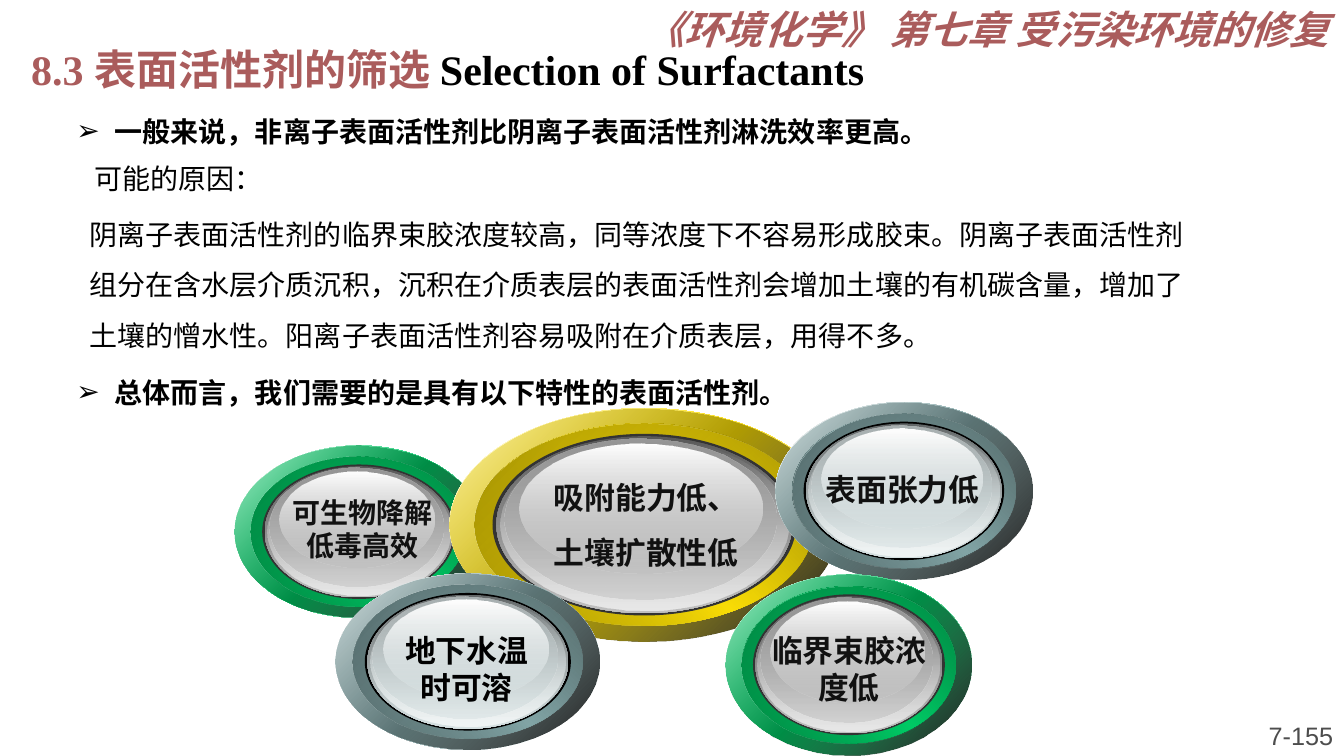
from collections import namedtuple

from lxml import etree
from pptx import Presentation, util as u
from pptx.dml.color import RGBColor
from pptx.enum import shapes, text
from pptx.oxml import ns

CELL = u.Inches(0.1)  # the slide is a grid of 133.3 columns by 75 rows
CJK, SERIF, SANS = "Noto Sans CJK SC", "Times New Roman", "Arial"
SINGLE, WIDE = 1.0, 1.5  # line spacings

WHITE = RGBColor(0xFF, 0xFF, 0xFF)
BLACK = RGBColor(0x00, 0x00, 0x00)
INK = RGBColor(0x11, 0x11, 0x11)
GREY = RGBColor(0x4D, 0x4D, 0x4D)
ROSE = RGBColor(0xAA, 0x5C, 0x5C)
CHARCOAL = RGBColor(0x33, 0x33, 0x33)

Ring = namedtuple("Ring", "hue deep dark")
GREEN = Ring(RGBColor(0x00, 0xCC, 0x66), RGBColor(0x00, 0x6E, 0x37), RGBColor(0x00, 0x82, 0x41))
YELLOW = Ring(RGBColor(0xFC, 0xDF, 0x06), RGBColor(0x88, 0x79, 0x03), RGBColor(0xA0, 0x8E, 0x04))
TEAL = Ring(RGBColor(0x83, 0xA6, 0xA7), RGBColor(0x47, 0x5A, 0x5A), RGBColor(0x53, 0x69, 0x6A))

Lens = namedtuple("Lens", "edge shadow face light shade")
SILVER = Lens(CHARCOAL, RGBColor(0x59, 0x59, 0x59), RGBColor(0xC0, 0xC0, 0xC0),
              RGBColor(0xE9, 0xE9, 0xE9), RGBColor(0x98, 0x98, 0x98))
ICE = Lens(BLACK, RGBColor(0x63, 0x68, 0x69), RGBColor(0xD6, 0xE1, 0xE2),
           RGBColor(0xF1, 0xF5, 0xF5), RGBColor(0xAA, 0xB2, 0xB3))

# Shares of the button's box: left, top, width, height
OUTER = (0, 0, 1, 1)
BEVEL = (0.065, 0.065, 0.87, 0.87)
EDGE = (0.11, 0.11, 0.78, 0.78)
BOWL = (0.12, 0.12, 0.76, 0.76)
SHEEN = (0.13, 0.13, 0.74, 0.74)
HOLLOW = (0.14, 0.13, 0.7, 0.69)
GLOSS = (0.18, 0.15, 0.625, 0.56)


def cells(box):
    return [round(length * CELL) for length in box]


def inside(box, share):
    left, top, width, height = box
    return (left + share[0] * width, top + share[1] * height,
            share[2] * width, share[3] * height)


def style(run, size, color, font=CJK, bold=False, italic=False):
    run.font.size, run.font.name = u.Pt(size), font
    run.font.bold, run.font.italic = bold, italic
    run.font.color.rgb = color
    east_asian = etree.SubElement(run.font._element, ns.qn("a:ea"))
    east_asian.set("typeface", CJK)


def indent(paragraph, left, first=0, bullet=None):
    properties = paragraph._p.get_or_add_pPr()
    properties.set("marL", str(u.Inches(left)))
    properties.set("indent", str(u.Inches(first)))
    if bullet:
        etree.SubElement(properties, ns.qn("a:buFont")).set("typeface", SANS)
        etree.SubElement(properties, ns.qn("a:buChar")).set("char", bullet)


def add_text(parent, box, words, size, color, align=text.PP_ALIGN.LEFT,
             spacing=SINGLE, anchor=text.MSO_ANCHOR.TOP, **look):
    frame = parent.add_textbox(*cells(box)).text_frame
    frame.word_wrap, frame.vertical_anchor = True, anchor
    frame.text = words
    paragraph = frame.paragraphs[0]
    paragraph.alignment, paragraph.line_spacing = align, spacing
    style(paragraph.runs[0], size, color, **look)
    return paragraph


def fill_gradient(shape, angle, *stops):
    """Each stop is a position, a colour and, if not solid, an opacity, in percent."""
    gradient = etree.Element(ns.qn("a:gradFill"), rotWithShape="1")
    stop_list = etree.SubElement(gradient, ns.qn("a:gsLst"))
    for position, color, *opacity in stops:
        stop = etree.SubElement(stop_list, ns.qn("a:gs"), pos=str(position * 1000))
        rgb = etree.SubElement(stop, ns.qn("a:srgbClr"), val=str(color))
        for percent in opacity:
            etree.SubElement(rgb, ns.qn("a:alpha"), val=str(percent * 1000))
    etree.SubElement(gradient, ns.qn("a:lin"), ang=str(angle * 60000), scaled="1")
    shape._element.spPr.find(ns.qn("a:prstGeom")).addnext(gradient)


def add_button(slide, box, ring, lens, label, label_share, spacing=SINGLE, size=22, color=INK):
    parts = slide.shapes.add_group_shape().shapes
    layers = (
        (OUTER, 45, (0, WHITE), (50, ring.hue), (100, WHITE)),
        (OUTER, 45, (0, ring.hue, 32), (100, BLACK, 90)),
        (BEVEL, 315, (0, ring.deep), (50, ring.hue), (100, ring.deep)),
        (BEVEL, 45, (0, ring.dark), (100, ring.hue, 0)),
        (EDGE, 0, (0, lens.edge)),
        (BOWL, 90, (0, lens.shadow), (100, lens.face)),
        (SHEEN, 90, (0, lens.face, 0), (100, lens.light)),
        (HOLLOW, 90, (0, lens.shade), (100, lens.face, 48)),
        (GLOSS, 90, (0, WHITE), (100, lens.face, 38)),
    )
    for share, angle, *stops in layers:
        oval = parts.add_shape(shapes.MSO_SHAPE.OVAL, *cells(inside(box, share)))
        oval.shadow.inherit = False
        oval.line.fill.background()
        if len(stops) == 1:
            oval.fill.solid()
            oval.fill.fore_color.rgb = stops[0][1]
        else:
            fill_gradient(oval, angle, *stops)
    add_text(parts, inside(box, label_share), label, size, color,
             text.PP_ALIGN.CENTER, spacing, bold=True)


def add_heading(slide, box):
    title = slide.shapes.title
    title.left, title.top, title.width, title.height = cells(box)
    frame = title.text_frame
    frame.word_wrap, frame.vertical_anchor = True, text.MSO_ANCHOR.TOP
    paragraph = frame.paragraphs[0]
    paragraph.alignment, paragraph.line_spacing = text.PP_ALIGN.LEFT, WIDE
    indent(paragraph, 0.5, -0.5)
    for words, color in (("8.3 表面活性剂的筛选 ", ROSE), ("Selection of Surfactants", BLACK)):
        run = paragraph.add_run()
        run.text = words
        style(run, 30, color, SERIF, bold=True)


def add_argument(slide, left, top):
    points = ((0, "一般来说，非离子表面活性剂比阴离子表面活性剂淋洗效率更高。"),
              (25.9, "总体而言，我们需要的是具有以下特性的表面活性剂。"))
    for row, point in points:
        paragraph = add_text(slide.shapes, (left, top + row, 120, 6), point, 20, BLACK,
                             spacing=WIDE, bold=True)
        indent(paragraph, 0.38, -0.38, "➢")
    add_text(slide.shapes, (left + 1.8, top + 6.3, 66.7, 4.4), "可能的原因：", 20, BLACK)
    reason = add_text(
        slide.shapes, (left - 3.7, top + 10.2, 117, 18.6),
        "阴离子表面活性剂的临界束胶浓度较高，同等浓度下不容易形成胶束。"
        "阴离子表面活性剂组分在含水层介质沉积，沉积在介质表层的表面活性剂会增加土壤的有机碳含量，"
        "增加了土壤的憎水性。阳离子表面活性剂容易吸附在介质表层，用得不多。",
        20, BLACK, spacing=WIDE)
    indent(reason, 0.5)


def add_traits(slide):
    add_button(slide, (23.3, 44.2, 24.6, 17.1), GREEN, SILVER,
               "可生物降解低毒高效", (0.15, 0.26, 0.73, 0.55), size=20)
    add_button(slide, (44.6, 40.5, 38.6, 23.1), YELLOW, SILVER,
               "吸附能力低、土壤扩散性低", (0.225, 0.2, 0.56, 0.52), WIDE)
    add_button(slide, (76.9, 39.9, 25.5, 17.6), TEAL, ICE,
               "表面张力低", (0.13, 0.36, 0.73, 0.27))
    add_button(slide, (33.3, 56.9, 26.2, 17.5), TEAL, ICE,
               "地下水温时可溶", (0.18, 0.3, 0.63, 0.48), color=BLACK)
    add_button(slide, (72, 57, 24.4, 17.9), GREEN, SILVER,
               "临界束胶浓度低", (0.11, 0.29, 0.78, 0.41))


def add_margins(slide):
    """Page number at the foot and chapter name at the head."""
    add_text(slide.shapes, (112.3, 69.8, 20.9, 5.2), "7-155", 18, GREY, text.PP_ALIGN.RIGHT,
             anchor=text.MSO_ANCHOR.BOTTOM, font=SANS)
    add_text(slide.shapes, (53.3, 0, 79.5, 5.7), "《环境化学》 第七章 受污染环境的修复", 28, ROSE,
             text.PP_ALIGN.RIGHT, font=SERIF, bold=True, italic=True)


def main():
    deck = Presentation()
    deck.slide_width, deck.slide_height = u.Inches(13.33), u.Inches(7.5)
    slide = deck.slides.add_slide(deck.slide_layouts[5])
    add_heading(slide, (2.1, 1.3, 107.1, 8.6))
    add_argument(slide, 6.6, 9.2)
    add_traits(slide)
    add_margins(slide)
    deck.save("out.pptx")


if __name__ == "__main__":
    main()
